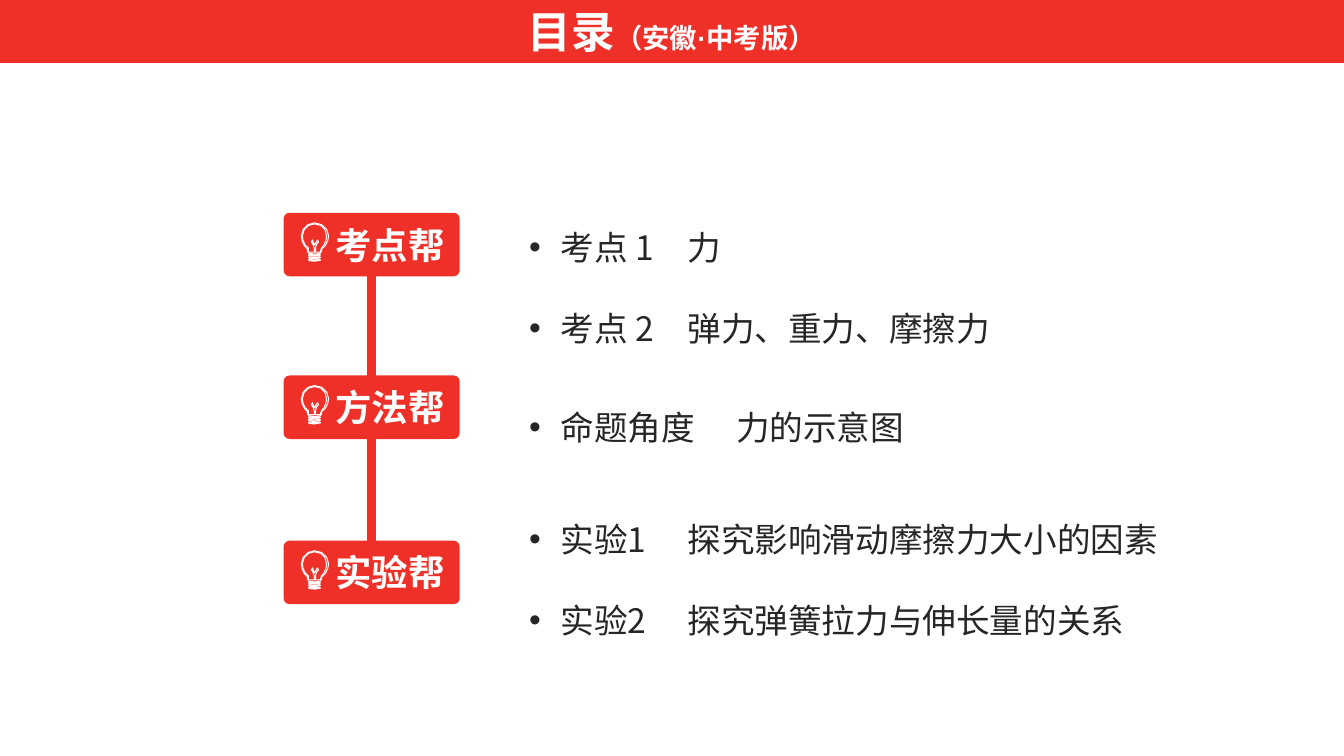
from math import dist
from lxml.etree import SubElement
from pptx import Presentation
from pptx.dml.color import RGBColor
from pptx.enum.shapes import MSO_CONNECTOR, MSO_SHAPE
from pptx.enum.text import MSO_ANCHOR, MSO_AUTO_SIZE, PP_ALIGN
from pptx.oxml.ns import qn
from pptx.util import Pt

COLORS = {"red": "EE3028", "white": "FFFFFF", "ink": "262626"}
HAN = "Noto Sans CJK SC"
WIDE, HIGH = 960, 540
LEFT, WIDTH, HEIGHT = 202.6, 125.8, 45.4

# Section name, badge top, list top, list height, extra gap, list items
PARTS = [
    ("考点帮", 152, 129.8, 123.8, 0,
     [("考点 1", "力"), ("考点 2", "弹力、重力、摩擦力")]),
    ("方法帮", 268.2, 258.5, 65.5, 5.4, [("命题角度", "力的示意图")]),
    ("实验帮", 386.2, 338.4, 123.8, 5.4,
     [("实验1", "探究影响滑动摩擦力大小的因素"),
      ("实验2", "探究弹簧拉力与伸长量的关系")]),
]

# Bulb outlines: a start point, then cubic curves, in units of 0.72 pt
UNIT = 0.72
GLASS = ((13, 0), [
    (21, 0, 27, 6, 27, 13), (27, 18, 24, 24, 20, 26), (20, 27, 20, 27, 20, 28),
    (20, 29, 20, 30, 19, 30), (18, 31, 15, 31, 14, 31), (11, 31, 8, 30, 7, 30),
    (6, 30, 6, 29, 6, 27), (6, 27, 6, 26, 6, 26), (2, 23, 0, 17, 0, 13),
    (0, 6, 6, 0, 13, 0)])
INNER = ((13, 1), [
    (7, 1, 1, 6, 1, 13), (1, 17, 3, 23, 7, 25), (7, 25, 7, 26, 7, 27),
    (7, 28, 7, 28, 7, 29), (8, 29, 10, 29, 13, 29), (13, 29, 13, 28, 13, 28),
    (13, 25, 12, 21, 10, 19), (9, 18, 10, 17, 11, 17), (12, 19, 13, 20, 13, 22),
    (14, 20, 15, 19, 16, 17), (17, 17, 18, 18, 17, 19), (14, 21, 14, 25, 14, 28),
    (14, 28, 14, 29, 14, 29), (16, 29, 18, 29, 19, 29), (19, 29, 19, 28, 19, 28),
    (19, 26, 19, 26, 20, 25), (23, 23, 25, 17, 25, 13), (25, 6, 20, 1, 13, 1)])
RING = [(9, 1, 17, 1, 18, 0), (19, 0, 19, 0, 19, 1), (18, 2, 16, 2, 14, 2),
        (11, 2, 8, 2, 7, 1), (7, 1, 7, 0, 8, 0)]


def tint(name):
    return RGBColor.from_string(COLORS[name])


def paint(shape, line=None):
    shape.shadow.inherit = False
    shape.fill.solid()
    shape.fill.fore_color.rgb = tint("red")
    if line:
        shape.line.color.rgb = tint(line)
        shape.line.width = Pt(0.75)
    else:
        shape.line.fill.background()


def add_run(para, text, size, color, face="Arial", bold=False, gap=0):
    run = para.add_run()
    run.text = text
    font = run.font
    font.size, font.bold, font.name = Pt(size), bold, face
    font.color.rgb = tint(color)
    props = run._r.get_or_add_rPr()
    SubElement(props, qn("a:ea"), typeface=HAN)
    if gap:
        props.set("spc", str(round(gap * 100)))


def add_title(slide):
    bar = slide.shapes.add_shape(MSO_SHAPE.RECTANGLE, 0, 0, Pt(WIDE), Pt(45))
    paint(bar)
    bar.text_frame.vertical_anchor = MSO_ANCHOR.MIDDLE
    para = bar.text_frame.paragraphs[0]
    para.alignment = PP_ALIGN.CENTER
    add_run(para, "目录", 31.2, "white", bold=True)
    add_run(para, "（安徽·中考版）", 19.5, "white", bold=True)


def trace(start, curves):
    """Points along a chain of cubic curves; long ones get three steps."""
    x, y = start
    dots = [start]
    for a, b, c, d, e, f in curves:
        steps = 3 if dist((x, y), (e, f)) > 7 else 1
        for i in range(1, steps + 1):
            t = i / steps
            s = 1 - t
            dots.append(tuple(
                s**3 * p + 3 * s * s * t * q + 3 * s * t * t * r + t**3 * z
                for p, q, r, z in ((x, a, c, e), (y, b, d, f))))
        x, y = e, f
    return dots[:-1]


def add_bulb(shapes, left, top):
    rings = [[(x, y + base) for x, y in trace((8, 0), RING)]
             for base in (36, 33.5, 31)]
    pen = None
    for dots in rings + [trace(*INNER), trace(*GLASS)]:
        dots = [(x * UNIT * 100, y * UNIT * 100) for x, y in dots]
        if pen is None:
            pen = shapes.build_freeform(*dots[0], scale=Pt(0.01))
        else:
            pen.move_to(*dots[0])
        pen.add_line_segments(dots[1:], close=True)
    paint(pen.convert_to_shape(Pt(left), Pt(top)), "white")


def add_badge(slide, name, top):
    shapes = slide.shapes.add_group_shape().shapes
    badge = shapes.add_shape(MSO_SHAPE.ROUNDED_RECTANGLE,
                             Pt(LEFT), Pt(top), Pt(WIDTH), Pt(HEIGHT))
    badge.adjustments[0] = 0.095
    paint(badge)
    frame = badge.text_frame
    frame.vertical_anchor = MSO_ANCHOR.MIDDLE
    frame.margin_right = Pt(9.4)
    para = frame.paragraphs[0]
    para.alignment = PP_ALIGN.RIGHT
    add_run(para, name, 26, "white", bold=True)
    add_bulb(shapes, LEFT + 12.7, top + 7.2)
    return badge


def add_list(slide, items, top, height, gap):
    box = slide.shapes.add_textbox(Pt(370.8), Pt(top), Pt(514), Pt(height))
    frame = box.text_frame
    frame.word_wrap = True
    frame.auto_size = MSO_AUTO_SIZE.SHAPE_TO_FIT_TEXT
    for i, (label, topic) in enumerate(items):
        para = frame.add_paragraph() if i else frame.paragraphs[0]
        para.line_spacing = 2.0
        props = para._p.get_or_add_pPr()
        props.set("marL", str(Pt(22.5)))
        props.set("indent", str(-Pt(22.5)))
        SubElement(props, qn("a:buFont"), typeface="Arial")
        SubElement(props, qn("a:buChar"), char="•")
        if gap:
            add_run(para, label, 24, "ink", HAN)
            add_run(para, "　", 24, "ink", HAN, gap=gap)
            add_run(para, topic, 24, "ink", HAN)
        else:
            add_run(para, f"{label}　{topic}", 24, "ink", HAN)


def add_stem(slide):
    stem = slide.shapes.add_connector(MSO_CONNECTOR.STRAIGHT, 0, 0, 0, 0)
    stem.line.color.rgb = tint("red")
    stem.line.width = Pt(6)
    SubElement(stem._element.spPr, qn("a:effectLst"))
    return stem


def main():
    deck = Presentation()
    deck.slide_width, deck.slide_height = Pt(WIDE), Pt(HIGH)
    slide = deck.slides.add_slide(deck.slide_layouts[6])

    # Stem lies behind the badges
    stem = add_stem(slide)
    add_title(slide)

    # Sections
    badges = []
    for name, top, start, height, gap, items in PARTS:
        badges.append(add_badge(slide, name, top))
        add_list(slide, items, start, height, gap)

    # Join first and last badge
    stem.begin_connect(badges[0], 2)
    stem.end_connect(badges[-1], 0)
    deck.save("out.pptx")


if __name__ == "__main__":
    main()
